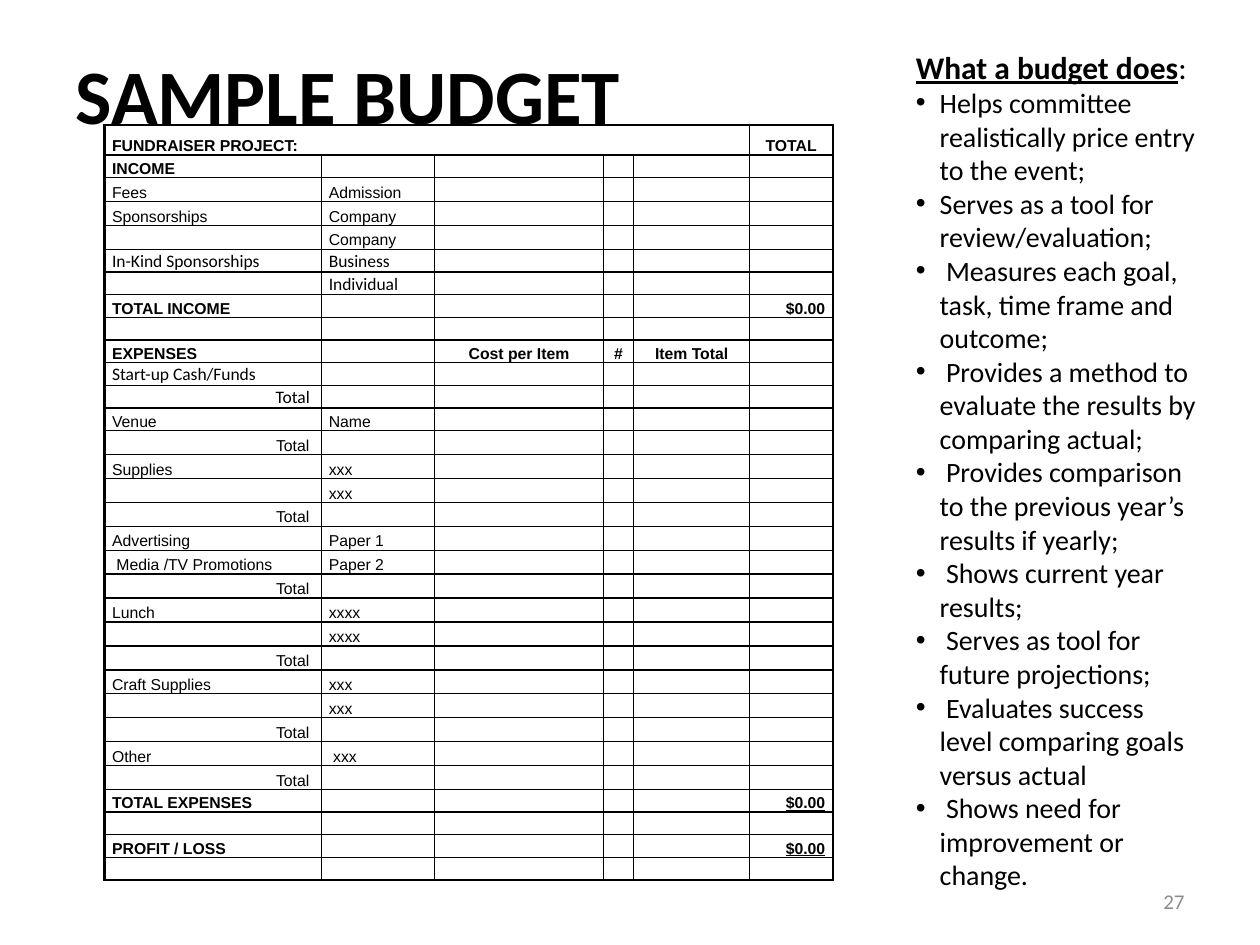
import pptx
import pptx.dml.color
import pptx.enum.text
import pptx.oxml
import pptx.oxml.ns
import pptx.util
from pptx.util import Inches

BLACK = pptx.dml.color.RGBColor(0, 0, 0)
GRAY = pptx.dml.color.RGBColor(0x8C, 0x8C, 0x8C)
ALIGN = pptx.enum.text.PP_ALIGN
ANCHOR = pptx.enum.text.MSO_ANCHOR

COLUMN_WIDTHS = [1.72, 0.9, 1.34, 0.24, 0.92, 0.66]
HEADER_HEIGHT, SHORT_HEIGHT, TALL_HEIGHT = 0.24, 0.18, 0.19
TALL_ROWS = {2, 3, 4, *range(13, 28)}
CALIBRI_ROWS = {5, 6, 10, 11}
UNDERLINED_ROWS = {28, 30}

BUDGET_ROWS = [
    ["FUNDRAISER PROJECT:", "", "", "", "", "TOTAL"],
    ["INCOME"],
    ["Fees", "Admission"],
    ["Sponsorships", "Company"],
    ["", "Company"],
    ["In-Kind Sponsorships", "Business"],
    ["", "Individual"],
    ["TOTAL INCOME", "", "", "", "", "$0.00"],
    [],
    ["EXPENSES", "", "Cost per Item", "#", "Item Total"],
    ["Start-up Cash/Funds"],
    ["Total "],
    ["Venue", "Name"],
    ["Total "],
    ["Supplies", "xxx"],
    ["", "xxx"],
    ["Total "],
    ["Advertising", "Paper 1"],
    [" Media /TV Promotions", "Paper 2"],
    ["Total "],
    ["Lunch", "xxxx"],
    ["", "xxxx"],
    ["Total "],
    ["Craft Supplies", "xxx"],
    ["", "xxx"],
    ["Total "],
    ["Other", " xxx"],
    ["Total "],
    ["TOTAL EXPENSES", "", "", "", "", "$0.00"],
    [],
    ["PROFIT / LOSS", "", "", "", "", "$0.00"],
    [],
]

BENEFITS = [
    "Helps committee realistically price entry to the event;",
    "Serves as a tool for review/evaluation;",
    " Measures each goal, task, time frame and outcome;",
    " Provides a method to evaluate the results by comparing actual;",
    " Provides comparison to the previous year’s results if yearly;",
    " Shows current year results;",
    " Serves as tool for future projections;",
    " Evaluates success level comparing goals versus actual",
    " Shows need for improvement or change.",
]


def write_text(para, text, size, font="Calibri", color=BLACK, bold=False,
               underline=False, align=ALIGN.LEFT):
    para.alignment = align
    span = para.add_run()
    span.text = text
    span.font.size = pptx.util.Pt(size)
    span.font.name = font
    span.font.color.rgb = color
    span.font.bold = bold
    span.font.underline = underline


def add_bullet(para, indent):
    properties = para._p.get_or_add_pPr()
    properties.set("marL", str(indent))
    properties.set("indent", str(-indent))
    namespace = pptx.oxml.ns.nsdecls("a")
    for tag in ('buFont typeface="Arial"', 'buChar char="•"'):
        properties.append(pptx.oxml.parse_xml(f"<a:{tag} {namespace}/>"))


def set_borders(cell, widths):
    properties = cell._tc.get_or_add_tcPr()
    namespace = pptx.oxml.ns.nsdecls("a")
    for side in "LRTB":
        properties.append(pptx.oxml.parse_xml(
            f'<a:ln{side} {namespace} w="{pptx.util.Pt(widths[side])}">'
            f'<a:solidFill><a:srgbClr val="{BLACK}"/></a:solidFill></a:ln{side}>'))


def cell_format(row, column, text):
    if column == 5:
        align = ALIGN.CENTER if row == 0 else ALIGN.RIGHT
    elif column >= 2:
        align = ALIGN.CENTER
    else:
        align = ALIGN.RIGHT if text == "Total " else ALIGN.LEFT
    calibri = row in CALIBRI_ROWS
    return {
        "size": 10 if calibri else 9,
        "font": "Calibri" if calibri else "Arial",
        "bold": column >= 2 or text.isupper(),
        "underline": column == 5 and row in UNDERLINED_ROWS,
        "align": align,
    }


def add_title(page, left, top, width, height):
    title = page.shapes.title
    title.left, title.top, title.width, title.height = left, top, width, height
    frame = title.text_frame
    frame.vertical_anchor = ANCHOR.MIDDLE
    write_text(frame.paragraphs[0], "SAMPLE BUDGET", size=44, bold=True)


def add_budget_table(page, left, top, width, height):
    last_row, last_column = len(BUDGET_ROWS) - 1, len(COLUMN_WIDTHS) - 1
    table = page.shapes.add_table(last_row + 1, last_column + 1,
                                  left, top, width, height).table
    table.first_row = table.horz_banding = False
    for column, column_width in zip(table.columns, COLUMN_WIDTHS):
        column.width = Inches(column_width)
    for row, texts in enumerate(BUDGET_ROWS):
        row_height = TALL_HEIGHT if row in TALL_ROWS else SHORT_HEIGHT
        table.rows[row].height = Inches(row_height if row else HEADER_HEIGHT)
        for column in range(last_column + 1):
            cell = table.cell(row, column)
            cell.margin_left = cell.margin_right = Inches(0.06)
            cell.margin_top = cell.margin_bottom = 0
            cell.vertical_anchor = ANCHOR.BOTTOM
            set_borders(cell, {"L": 1 if column else 1.5,
                               "R": 1.5 if column == last_column else 1,
                               "T": 1 if row else 1.5,
                               "B": 1.5 if row == last_row else 1})
            cell.fill.background()
            para = cell.text_frame.paragraphs[0]
            text = texts[column] if column < len(texts) else ""
            if text:
                write_text(para, text, **cell_format(row, column, text))
            else:
                para._p.get_or_add_endParaRPr().set("sz", "900")
    table.cell(0, 0).merge(table.cell(0, 4))


def add_benefits(page, left, top, width, height):
    frame = page.shapes.add_textbox(left, top, width, height).text_frame
    frame.word_wrap = True
    heading = frame.paragraphs[0]
    write_text(heading, "What a budget does", size=18, bold=True, underline=True)
    write_text(heading, ":", size=18)
    for benefit in BENEFITS:
        para = frame.add_paragraph()
        write_text(para, benefit, size=16)
        add_bullet(para, Inches(0.19))


def add_page_number(page, left, top, width, height):
    frame = page.shapes.add_textbox(left, top, width, height).text_frame
    frame.word_wrap = True
    frame.vertical_anchor = ANCHOR.MIDDLE
    write_text(frame.paragraphs[0], "27", size=12, color=GRAY, align=ALIGN.RIGHT)


def main():
    deck = pptx.Presentation()
    deck.slide_width, deck.slide_height = Inches(10), Inches(7.5)
    page = deck.slides.add_slide(deck.slide_layouts[5])
    add_title(page, Inches(0.5), Inches(0.3), Inches(9), Inches(0.89))
    add_budget_table(page, Inches(0.83), Inches(0.99), Inches(5.78), Inches(6))
    add_page_number(page, Inches(7.17), Inches(6.95), Inches(2.33), Inches(0.4))
    add_benefits(page, Inches(7.17), Inches(0.33), Inches(2.46), Inches(6.87))
    deck.save("out.pptx")


if __name__ == "__main__":
    main()
